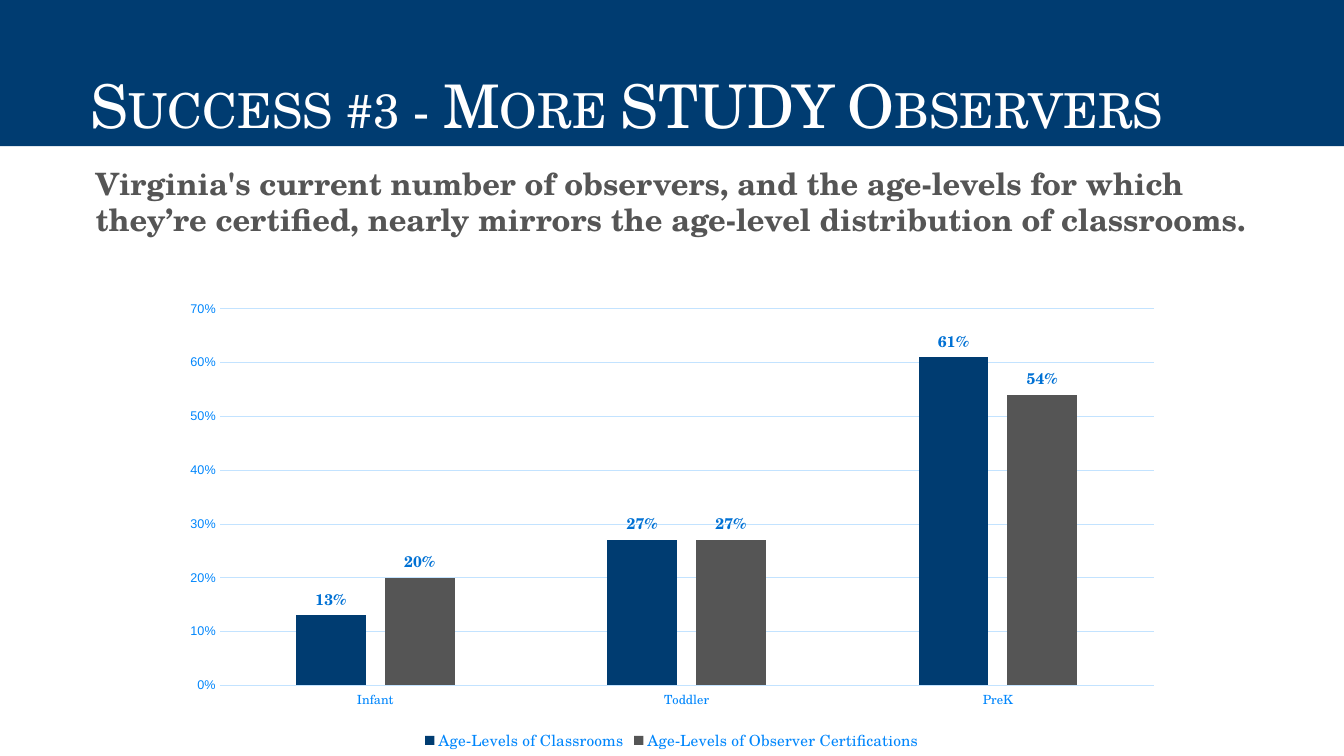
from pptx import Presentation
from pptx.chart.data import CategoryChartData
from pptx.dml.color import RGBColor
from pptx.enum.chart import XL_CHART_TYPE as ChartType
from pptx.enum.chart import XL_LABEL_POSITION as LabelPosition
from pptx.enum.chart import XL_LEGEND_POSITION as LegendPosition
from pptx.enum.chart import XL_TICK_MARK as TickMark
from pptx.enum.text import MSO_ANCHOR as Anchor
from pptx.enum.text import MSO_AUTO_SIZE as AutoSize
from pptx.enum.text import PP_ALIGN as Align
from pptx.util import Inches, Pt

SERIF = "TeX Gyre Schola"
NAVY = "003C71"
GRAY = "555555"
AXIS_BLUE = "0086FC"
LABEL_BLUE = "0071D4"
PALE_BLUE = "C3E3FF"
WHITE = "FFFFFF"

AGE_LEVELS = ["Infant", "Toddler", "PreK"]
SHARES = [
    ("Age-Levels of Classrooms", [0.13, 0.27, 0.61], NAVY),
    ("Age-Levels of Observer Certifications", [0.2, 0.27, 0.54], GRAY),
]


def rgb(color):
    return RGBColor.from_string(color)


def apply(target, values):
    for key, value in values.items():
        setattr(target, key, value)


def style_font(font, size, color, name=SERIF, bold=False):
    apply(font, {"size": Pt(size), "name": name, "bold": bold})
    font.color.rgb = rgb(color)


def style_line(line, color):
    line.color.rgb = rgb(color)
    line.width = Pt(0.75)


def set_frame(frame, left_inset, anchor):
    apply(frame, {
        "word_wrap": True,
        "auto_size": AutoSize.NONE,
        "vertical_anchor": anchor,
        "margin_left": Inches(left_inset),
        "margin_right": Inches(0.1),
        "margin_top": Inches(0.05),
        "margin_bottom": Inches(0.05),
    })


def place(shape, box):
    apply(shape, dict(zip(("left", "top", "width", "height"), map(Inches, box))))


def add_heading(slide, box):
    heading = slide.shapes.title
    place(heading, box)
    heading.fill.solid()
    heading.fill.fore_color.rgb = rgb(NAVY)
    set_frame(heading.text_frame, 0.9, Anchor.BOTTOM)
    paragraph = heading.text_frame.paragraphs[0]
    apply(paragraph, {"alignment": Align.LEFT, "line_spacing": 0.9})
    run = paragraph.add_run()
    run.text = "Success #3 - More STUDY Observers"
    style_font(run.font, 43, WHITE)
    run._r.get_or_add_rPr().set("cap", "small")


def add_statement(slide, box):
    statement = slide.shapes.add_textbox(*map(Inches, box))
    set_frame(statement.text_frame, 0.3, Anchor.TOP)
    paragraph = statement.text_frame.paragraphs[0]
    paragraph.space_before = Pt(10)
    run = paragraph.add_run()
    run.text = (
        "Virginia's current number of observers, and the age-levels for which "
        "they’re certified, nearly mirrors the age-level distribution of classrooms."
    )
    style_font(run.font, 22, GRAY, bold=True)


def style_axes(chart):
    ages, shares = chart.category_axis, chart.value_axis
    for axis, face in ((ages, SERIF), (shares, "Arial")):
        apply(axis, {"major_tick_mark": TickMark.NONE, "minor_tick_mark": TickMark.NONE})
        style_font(axis.tick_labels.font, 9, AXIS_BLUE, face)
    style_line(ages.format.line, PALE_BLUE)
    apply(shares, {
        "minimum_scale": 0,
        "maximum_scale": 0.7,
        "major_unit": 0.1,
        "has_major_gridlines": True,
    })
    shares.format.line.fill.background()
    style_line(shares.major_gridlines.format.line, PALE_BLUE)
    apply(shares.tick_labels, {"number_format": "0%", "number_format_is_linked": False})


def style_columns(plot):
    apply(plot, {"gap_width": 219, "overlap": -27, "vary_by_categories": False})
    for columns, (_, _, color) in zip(plot.series, SHARES):
        columns.format.fill.solid()
        columns.format.fill.fore_color.rgb = rgb(color)
        apply(columns.data_labels, {
            "show_value": True,
            "position": LabelPosition.OUTSIDE_END,
            "number_format": "0%",
            "number_format_is_linked": False,
        })
        style_font(columns.data_labels.font, 11, LABEL_BLUE, bold=True)


def add_share_chart(slide, box):
    data = CategoryChartData(number_format="0%")
    data.categories = AGE_LEVELS
    for name, values, _ in SHARES:
        data.add_series(name, values)
    chart = slide.shapes.add_chart(
        ChartType.COLUMN_CLUSTERED, *map(Inches, box), data
    ).chart
    apply(chart, {"has_title": False, "has_legend": True})
    style_font(chart.font, 10, NAVY, "Arial")
    apply(chart.legend, {"position": LegendPosition.BOTTOM, "include_in_layout": False})
    style_font(chart.legend.font, 11, AXIS_BLUE)
    style_axes(chart)
    style_columns(chart.plots[0])


def main():
    deck = Presentation()
    apply(deck, {"slide_width": Inches(13.33), "slide_height": Inches(7.5)})
    slide = deck.slides.add_slide(deck.slide_layouts[5])
    add_heading(slide, (0, 0, 13.33, 1.45))
    add_statement(slide, (0.65, 1.58, 12.03, 1.08))
    add_share_chart(slide, (1.69, 2.9, 9.95, 4.6))
    deck.save("out.pptx")


if __name__ == "__main__":
    main()
